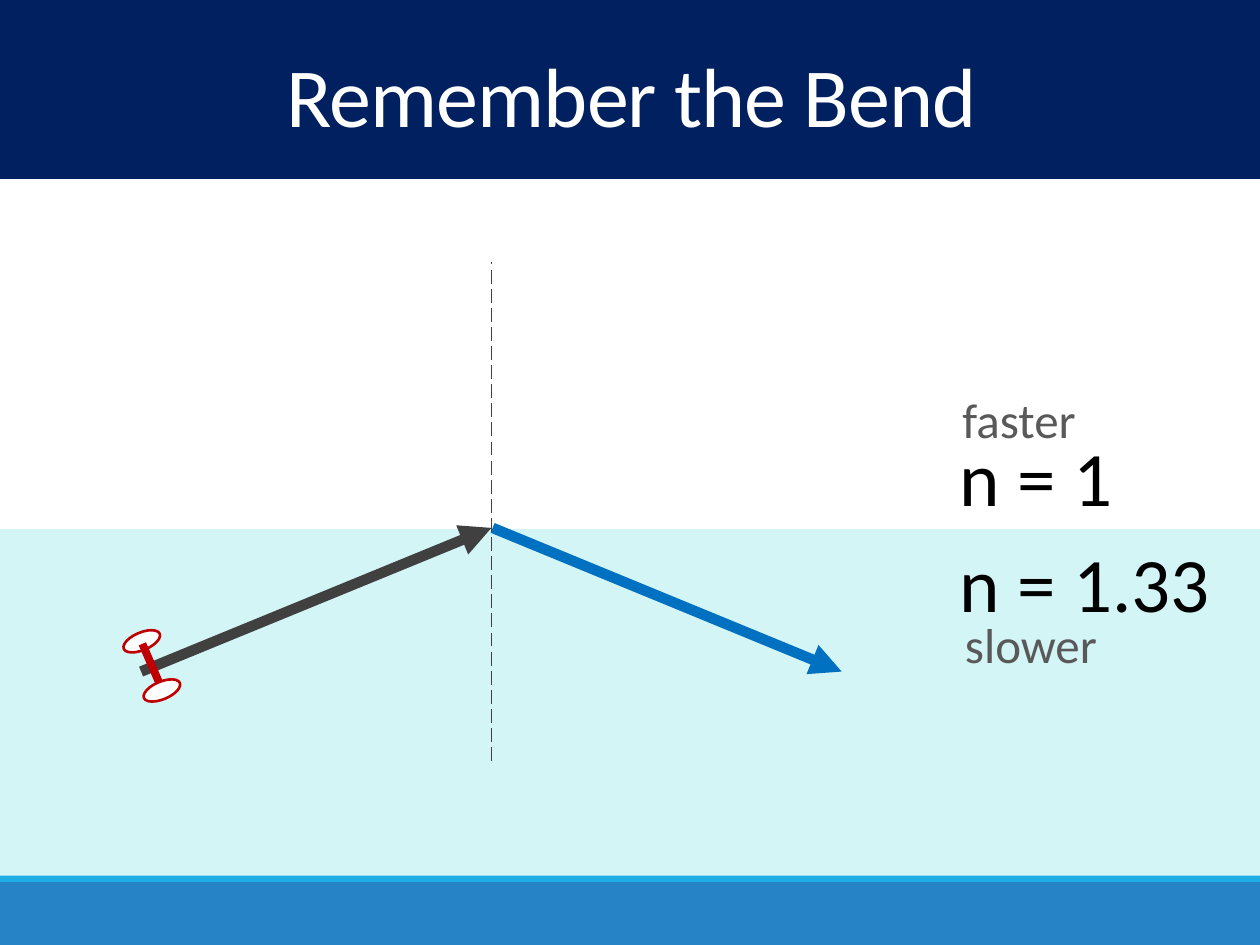
from lxml.etree import SubElement
from pptx import Presentation
from pptx.dml.color import RGBColor
from pptx.enum.dml import MSO_LINE
from pptx.enum.shapes import MSO_CONNECTOR, MSO_SHAPE
from pptx.enum.text import MSO_ANCHOR, MSO_AUTO_SIZE, PP_ALIGN
from pptx.oxml.ns import qn
from pptx.util import Pt

EMU_PER_PX = 9144
FONT = "Calibri"
WHITE = RGBColor(0xFF, 0xFF, 0xFF)
BLACK = RGBColor(0x00, 0x00, 0x00)
NAVY = RGBColor(0x00, 0x20, 0x60)
WATER = RGBColor(0xD3, 0xF5, 0xF6)
FOOTER = RGBColor(0x26, 0x83, 0xC6)
FOOTER_EDGE = RGBColor(0x1C, 0xAD, 0xE4)
RAY_IN = RGBColor(0x40, 0x40, 0x40)
RAY_OUT = RGBColor(0x00, 0x70, 0xC0)
AXLE_RED = RGBColor(0xC0, 0x00, 0x00)
GRAY = RGBColor(0x59, 0x59, 0x59)


def px(*lengths):
    """Turn px lengths into a list of EMU lengths."""
    return [length * EMU_PER_PX for length in lengths]


def style_font(para, size, color):
    """Set the font of a whole paragraph."""
    para.font.name = FONT
    para.font.size = Pt(size)
    para.font.color.rgb = color


def add_band(page, top, height, color):
    """Add a borderless rectangle across the full width."""
    band = page.shapes.add_shape(MSO_SHAPE.RECTANGLE, *px(0, top, 1000, height))
    band.shadow.inherit = False
    band.fill.solid()
    band.fill.fore_color.rgb = color
    band.line.fill.background()


def add_line(shapes, start, end, color, width, dash=None, arrow=False):
    """Add a straight line, with an optional arrowhead at its start."""
    line = shapes.add_connector(MSO_CONNECTOR.STRAIGHT, *px(*start, *end))
    line.line.color.rgb = color
    line.line.width = Pt(width)
    if dash:
        line.line.dash_style = dash
    if arrow:
        SubElement(line.line._get_or_add_ln(), qn("a:headEnd"), type="triangle")
    SubElement(line._element.spPr, qn("a:effectLst"))


def add_wheel(shapes, left, top):
    """Add one tilted wheel of the axle."""
    wheel = shapes.add_shape(MSO_SHAPE.OVAL, *px(left, top, 31, 14))
    wheel.rotation = 337.2
    wheel.shadow.inherit = False
    wheel.fill.solid()
    wheel.fill.fore_color.rgb = WHITE
    wheel.line.color.rgb = AXLE_RED
    wheel.line.width = Pt(1.5)


def add_axle(page):
    """Add the group of two wheels joined by an axle."""
    shapes = page.shapes.add_group_shape().shapes
    add_wheel(shapes, 97, 502)
    add_line(shapes, (113, 511), (129, 548), AXLE_RED, 4.5)
    add_wheel(shapes, 113, 541)


def add_label(page, text, bounds, size, color):
    """Add a one-line text label."""
    box = page.shapes.add_textbox(*px(*bounds))
    box.text_frame.word_wrap = False
    box.text_frame.auto_size = MSO_AUTO_SIZE.SHAPE_TO_FIT_TEXT
    para = box.text_frame.paragraphs[0]
    para.text = text
    style_font(para, size, color)


def place_title(page, text):
    """Fill the title placeholder and bring it to the front."""
    title = page.shapes.title
    title.left, title.top, title.width, title.height = px(3, 42, 997, 84)
    frame = title.text_frame
    frame.auto_size = MSO_AUTO_SIZE.NONE
    frame.vertical_anchor = MSO_ANCHOR.TOP
    para = frame.paragraphs[0]
    para.text = text
    para.alignment = PP_ALIGN.CENTER
    para.line_spacing = 0.85
    style_font(para, 48, WHITE)
    para.runs[0].font._element.set("spc", "-50")
    page.shapes._spTree.append(title._element)


def main():
    """Build the slide and save it."""
    deck = Presentation()
    deck.slide_width, deck.slide_height = px(1000, 750)
    page = deck.slides.add_slide(deck.slide_layouts[5])

    add_band(page, 700, 50, FOOTER)
    add_band(page, 693, 7, FOOTER_EDGE)
    add_band(page, 0, 142, NAVY)
    place_title(page, "Remember the Bend")
    add_band(page, 420, 275, WATER)

    add_line(page.shapes, (668, 533), (391, 419), RAY_OUT, 6, arrow=True)
    add_line(page.shapes, (390, 604), (390, 208), RAY_IN, 1, dash=MSO_LINE.LONG_DASH)
    add_label(page, "n = 1", (752, 336, 142, 84), 44, BLACK)
    add_label(page, "n = 1.33", (752, 420, 220, 84), 44, BLACK)
    add_line(page.shapes, (390, 419), (112, 533), RAY_IN, 6, arrow=True)
    add_axle(page)
    add_label(page, "faster", (754, 304, 112, 57), 28, GRAY)
    add_label(page, "slower", (756, 483, 128, 57), 28, GRAY)
    deck.save("out.pptx")


if __name__ == "__main__":
    main()
